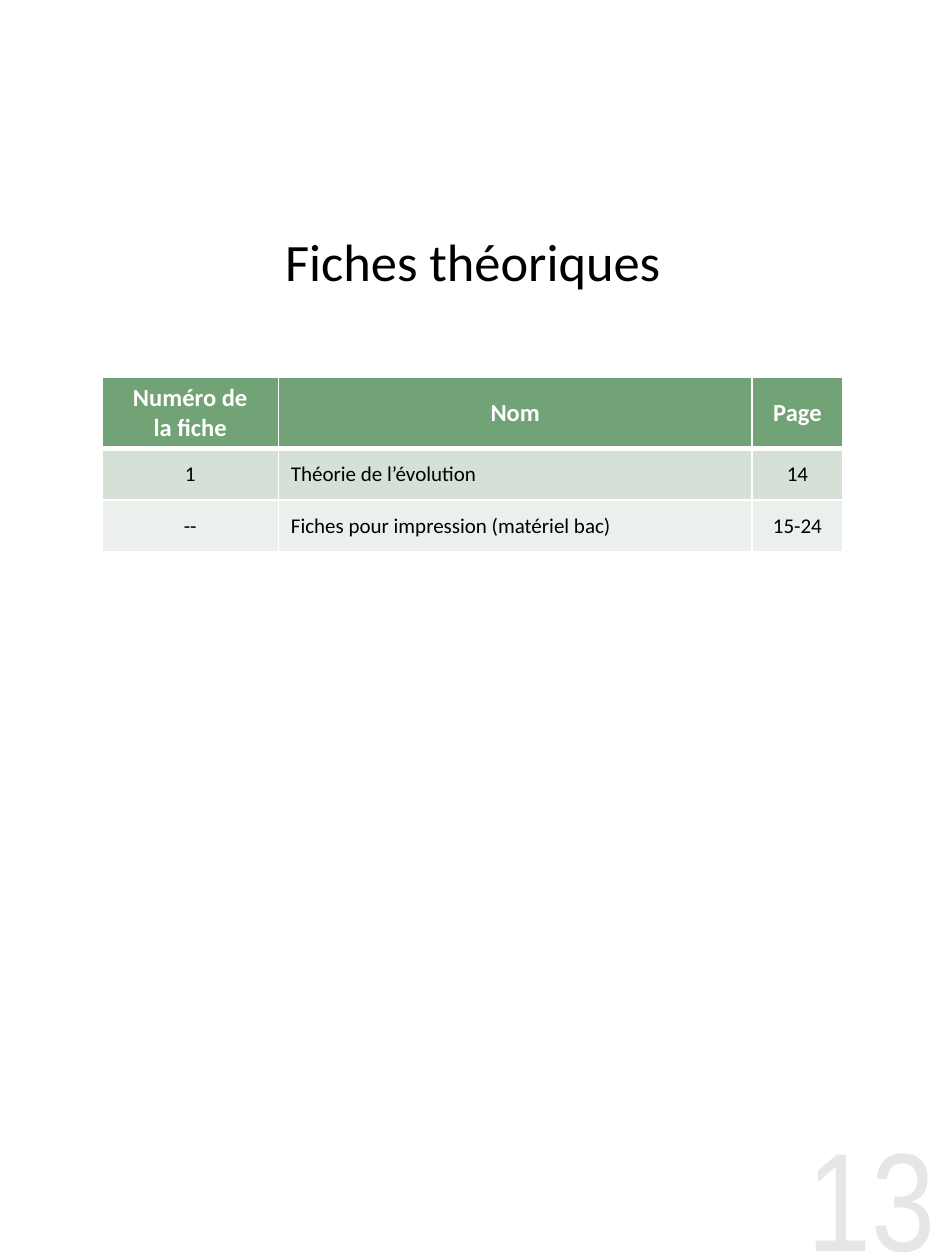
from lxml.etree import SubElement
from pptx import Presentation
from pptx.dml.color import RGBColor
from pptx.enum.shapes import MSO_SHAPE
from pptx.enum.text import MSO_ANCHOR, PP_ALIGN
from pptx.oxml.ns import qn
from pptx.util import Cm, Pt

TITLE = "Fiches théoriques"
PAGE_NUMBER = "13"
ROWS = [
    ("Numéro de\nla fiche", "Nom", "Page"),
    ("1", "Théorie de l’évolution", "14"),
    ("--", "Fiches pour impression (matériel bac)", "15-24"),
]
COL_WIDTHS = [3.55, 9.55, 1.83]
ROW_HEIGHTS = [1.42, 1.04, 1.04]
COLORS = {
    "white": "FFFFFF", "black": "000000", "header": "72A376",
    "band1": "D5E0D6", "band2": "EBF0EC", "number": "E6E6E6",
}
ROW_FILLS = ["header", "band1", "band2"]
HEADER = {"name": "Calibri", "size": Pt(14), "bold": True}
BODY = {"name": "Calibri", "size": Pt(12), "bold": False}
HEADING = {"name": "Calibri", "size": Pt(30)}
NUMBER = {"name": "Arial Narrow", "size": Pt(80)}


def rgb(name):
    return RGBColor.from_string(COLORS[name])


def write(tf, text, fmt, color, align):
    for i, line in enumerate(text.split("\n")):
        p = tf.paragraphs[0] if i == 0 else tf.add_paragraph()
        p.alignment = align
        r = p.add_run()
        r.text = line
        for key, value in fmt.items():
            setattr(r.font, key, value)
        r.font.color.rgb = rgb(color)


def paint(obj, color):
    obj.fill.solid()
    obj.fill.fore_color.rgb = rgb(color)


def add_borders(cell, widths):
    tcPr = cell._tc.get_or_add_tcPr()
    for side, width in widths.items():
        ln = SubElement(tcPr, qn(f"a:ln{side}"), w=str(Pt(width)))
        fill = SubElement(ln, qn("a:solidFill"))
        SubElement(fill, qn("a:srgbClr"), val=COLORS["white"])


def add_index(s):
    frame = s.shapes.add_table(len(ROWS), len(COL_WIDTHS), Cm(2.06), Cm(7.6),
                               Cm(sum(COL_WIDTHS)), Cm(sum(ROW_HEIGHTS)))
    table = frame.table
    for col, width in zip(table.columns, COL_WIDTHS):
        col.width = Cm(width)
    for i, values in enumerate(ROWS):
        table.rows[i].height = Cm(ROW_HEIGHTS[i])
        fmt, color = (HEADER, "white") if i == 0 else (BODY, "black")
        for j, text in enumerate(values):
            cell = table.cell(i, j)
            cell.vertical_anchor = MSO_ANCHOR.MIDDLE
            add_borders(cell, {"L": 1, "R": 1, "T": 3 if i == 1 else 1,
                               "B": 3 if i == 0 else 1})
            paint(cell, ROW_FILLS[i])
            left = i > 0 and j == 1
            write(cell.text_frame, text, fmt, color,
                  PP_ALIGN.LEFT if left else PP_ALIGN.CENTER)


def add_title(s):
    sp = s.shapes.add_shape(MSO_SHAPE.RECTANGLE, Cm(5.46), Cm(4.4), Cm(8.15), Cm(1.7))
    sp.shadow.inherit = False
    paint(sp, "white")
    sp.line.fill.background()
    tf = sp.text_frame
    tf.word_wrap = True
    tf.vertical_anchor = MSO_ANCHOR.MIDDLE
    write(tf, TITLE, HEADING, "black", PP_ALIGN.CENTER)


def add_page_number(s):
    tf = s.shapes.add_textbox(Cm(14.85), Cm(22.4), Cm(4), Cm(3)).text_frame
    tf.word_wrap = True
    for side in ("left", "right", "top", "bottom"):
        setattr(tf, f"margin_{side}", 0)
    write(tf, PAGE_NUMBER, NUMBER, "number", PP_ALIGN.RIGHT)


def main():
    prs = Presentation()
    prs.slide_width, prs.slide_height = Cm(19.05), Cm(25.4)
    s = prs.slides.add_slide(prs.slide_layouts[6])
    add_page_number(s)
    add_index(s)
    add_title(s)
    prs.save("out.pptx")


if __name__ == "__main__":
    main()
